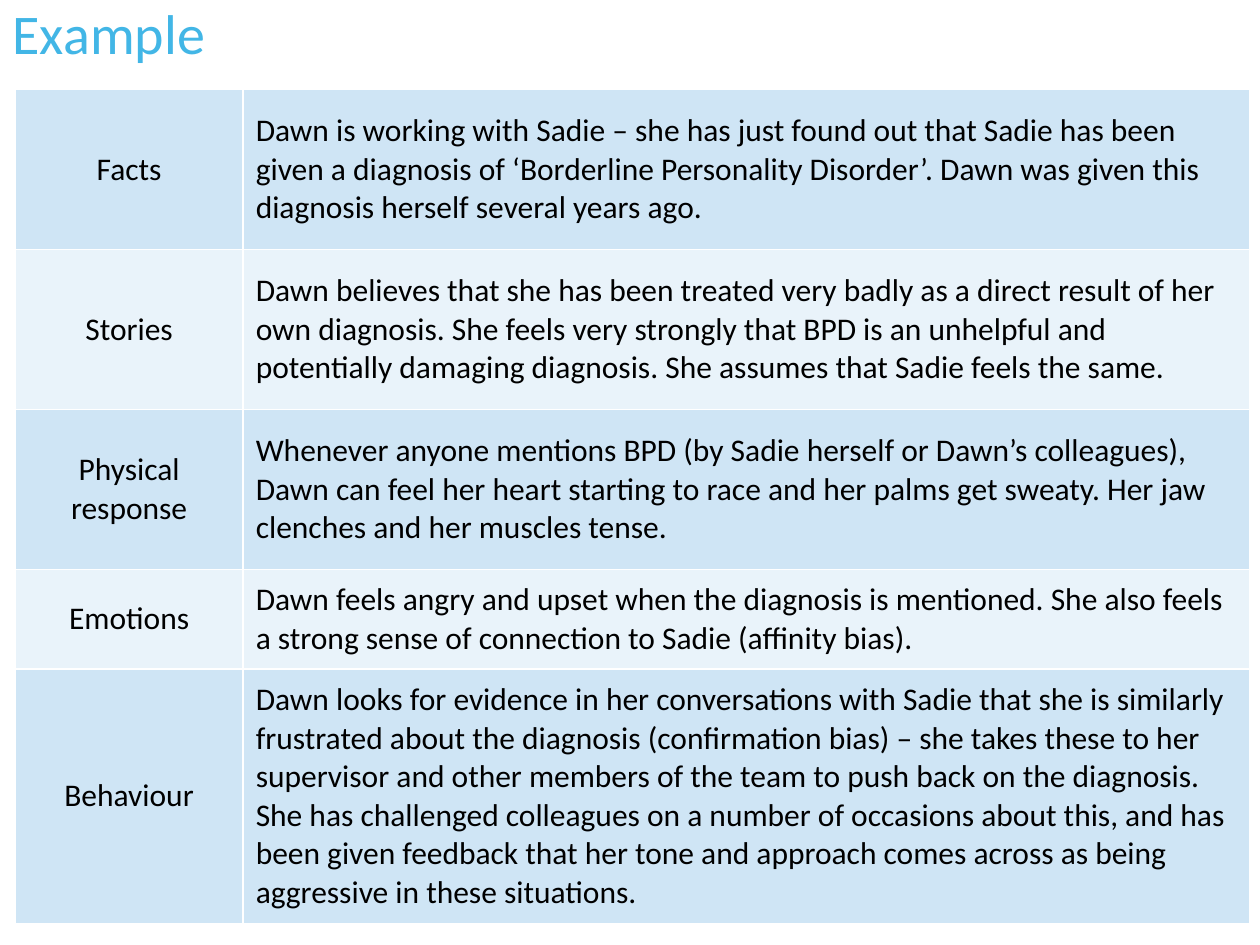
from lxml import etree
from pptx import Presentation
from pptx.dml.color import RGBColor
from pptx.enum.text import MSO_ANCHOR, PP_ALIGN
from pptx.oxml.ns import qn
from pptx.util import Inches, Pt

MIDDLE, TOP = MSO_ANCHOR.MIDDLE, MSO_ANCHOR.TOP
CENTER, LEFT = PP_ALIGN.CENTER, PP_ALIGN.LEFT

FONT = "Calibri"
BANDS = ("CFE5F5", "E9F3FA")
TITLE_BOX = (0, 0, 9.06, 1.03)
TABLE_BOX = (0.12, 0.71, 9.8, 6.62)
LABEL_WIDTH = 1.81
STEPS = (
    ("Facts", 1.27,
     "Dawn is working with Sadie – she has just found out that Sadie has been "
     "given a diagnosis of ‘Borderline Personality Disorder’. Dawn was given "
     "this diagnosis herself several years ago."),
    ("Stories", 1.27,
     "Dawn believes that she has been treated very badly as a direct result of "
     "her own diagnosis. She feels very strongly that BPD is an unhelpful and "
     "potentially damaging diagnosis. She assumes that Sadie feels the same."),
    ("Physical response", 1.27,
     "Whenever anyone mentions BPD (by Sadie herself or Dawn’s colleagues), "
     "Dawn can feel her heart starting to race and her palms get sweaty. Her "
     "jaw clenches and her muscles tense."),
    ("Emotions", 0.79,
     "Dawn feels angry and upset when the diagnosis is mentioned. She also "
     "feels a strong sense of connection to Sadie (affinity bias)."),
    ("Behaviour", 2.02,
     "Dawn looks for evidence in her conversations with Sadie that she is "
     "similarly frustrated about the diagnosis (confirmation bias) – she takes "
     "these to her supervisor and other members of the team to push back on "
     "the diagnosis. She has challenged colleagues on a number of occasions "
     "about this, and has been given feedback that her tone and approach comes "
     "across as being aggressive in these situations."),
)


def color(code):
    """Return the colour for a hex string."""
    return RGBColor.from_string(code)


def add_span(para, text, size, code, align):
    """Add one formatted run to an aligned paragraph."""
    para.alignment = align
    span = para.add_run()
    span.text = text
    span.font.name = FONT
    span.font.size = Pt(size)
    span.font.color.rgb = color(code)


def add_borders(cell, code="FFFFFF", width=1):
    """Draw all four borders of a cell."""
    properties = cell._tc.get_or_add_tcPr()
    for index, side in enumerate(("a:lnL", "a:lnR", "a:lnT", "a:lnB")):
        line = etree.Element(qn(side), w=str(Pt(width)))
        fill = etree.SubElement(line, qn("a:solidFill"))
        etree.SubElement(fill, qn("a:srgbClr"), val=code)
        properties.insert(index, line)


def fill_title(page, box, text):
    """Place and format the title placeholder."""
    title = page.shapes.title
    title.left, title.top, title.width, title.height = map(Inches, box)
    frame = title.text_frame
    frame.word_wrap = True
    frame.vertical_anchor = TOP
    para = frame.paragraphs[0]
    para.line_spacing = 0.9
    add_span(para, text, 32, "42B6E6", LEFT)


def add_steps_table(page, box, steps):
    """Add the banded table of labels and descriptions."""
    table = page.shapes.add_table(len(steps), 2, *map(Inches, box)).table
    table.first_row = False
    table.columns[0].width = Inches(LABEL_WIDTH)
    table.columns[1].width = Inches(box[2] - LABEL_WIDTH)
    for index, (label, height, description) in enumerate(steps):
        row = table.rows[index]
        row.height = Inches(height)
        for cell, text, align in zip(row.cells, (label, description), (CENTER, LEFT)):
            cell.fill.solid()
            cell.fill.fore_color.rgb = color(BANDS[index % 2])
            cell.vertical_anchor = MIDDLE
            add_borders(cell)
            add_span(cell.text_frame.paragraphs[0], text, 18, "000000", align)


def main():
    """Build and save the deck."""
    deck = Presentation()
    deck.slide_width, deck.slide_height = Inches(10), Inches(7.5)
    page = deck.slides.add_slide(deck.slide_layouts.get_by_name("Title Only"))
    fill_title(page, TITLE_BOX, "Example")
    add_steps_table(page, TABLE_BOX, STEPS)
    deck.save("out.pptx")


if __name__ == "__main__":
    main()
